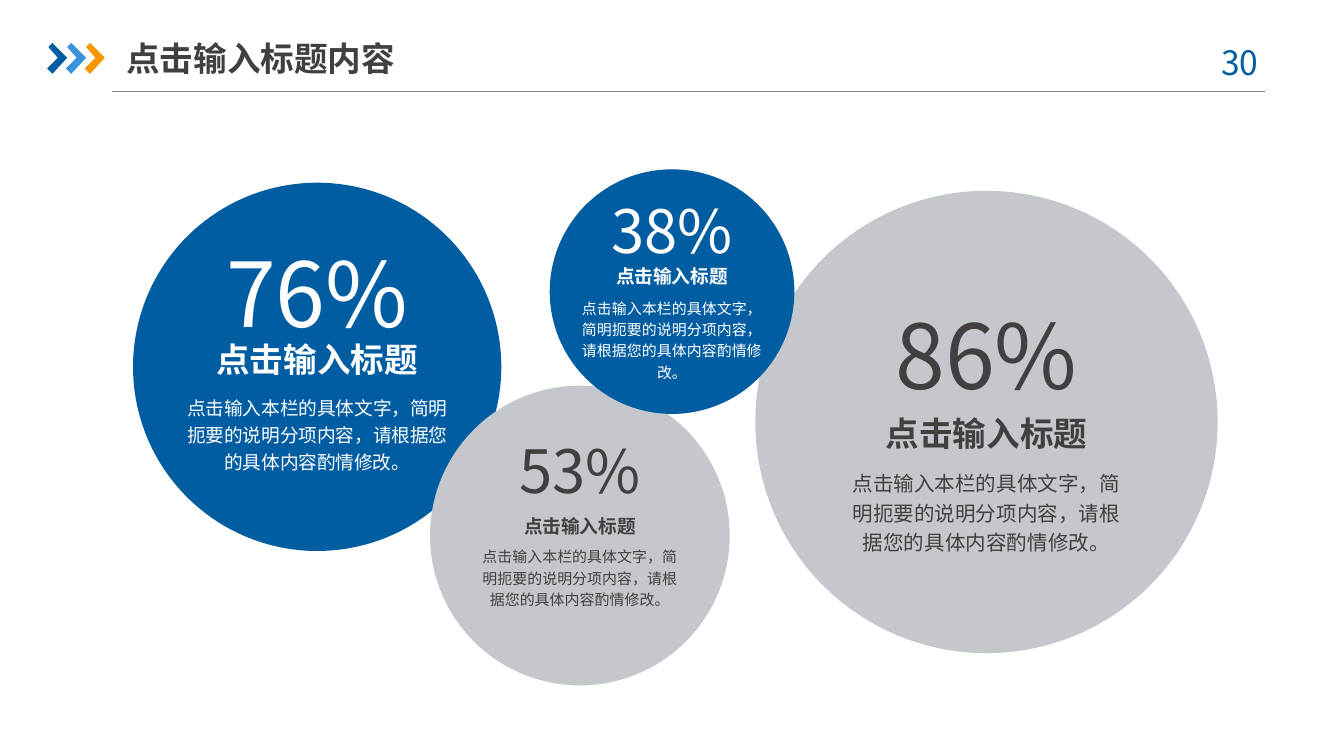
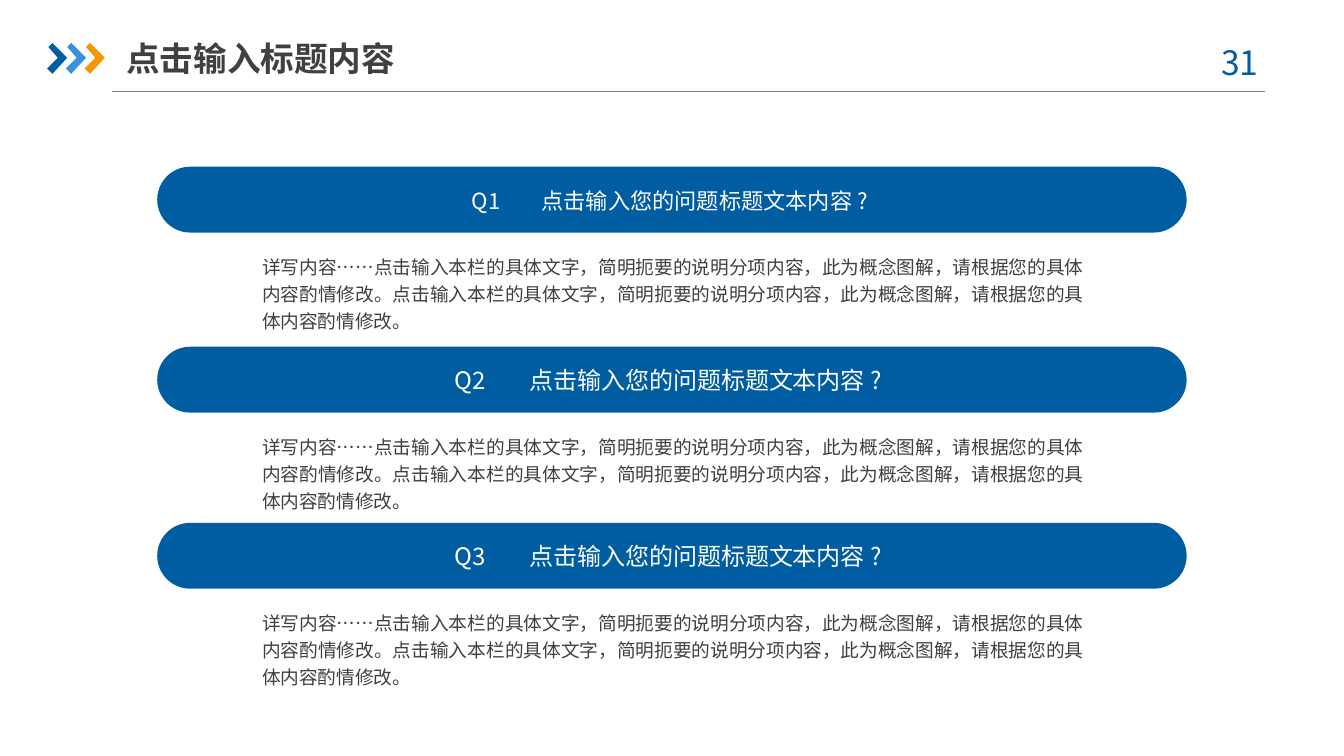
from lxml import etree
from pptx import Presentation
from pptx.dml.color import RGBColor
from pptx.enum.shapes import MSO_CONNECTOR, MSO_SHAPE
from pptx.enum.text import MSO_ANCHOR, MSO_AUTO_SIZE, PP_ALIGN
from pptx.oxml.ns import qn
from pptx.util import Inches, Pt

CIRCLE, PILL = MSO_SHAPE.OVAL, MSO_SHAPE.ROUNDED_RECTANGLE
STRAIGHT = MSO_CONNECTOR.STRAIGHT
LEFT, CENTER, JUSTIFY = PP_ALIGN.LEFT, PP_ALIGN.CENTER, PP_ALIGN.JUSTIFY
TOP, MIDDLE = MSO_ANCHOR.TOP, MSO_ANCHOR.MIDDLE
FIXED, GROW = MSO_AUTO_SIZE.NONE, MSO_AUTO_SIZE.SHAPE_TO_FIT_TEXT

BLUE = RGBColor(0x00, 0x5D, 0xA2)
SKY = RGBColor(0x39, 0x92, 0xDB)
ORANGE = RGBColor(0xF7, 0x96, 0x00)
SILVER = RGBColor(0xC4, 0xC7, 0xCB)
GRAY = RGBColor(0x80, 0x80, 0x80)
INK = RGBColor(0x40, 0x40, 0x40)
WHITE = RGBColor(0xFF, 0xFF, 0xFF)
PALE = RGBColor(0xFC, 0xFC, 0xFC)

FONT = "Noto Sans CJK SC"
COLUMNS = 100
ROWS = 56.25
TITLE_ONLY = 5
CHEVRON = [(0.1, 0.3), (0.4, 0), (1.5, 1.1), (0.4, 2.3), (0, 1.9), (0.8, 1.1)]

TITLE = "点击输入标题内容"
HEADING = "点击输入标题"
NOTE = "点击输入本栏的具体文字，简明扼要的说明分项内容，请根据您的具体内容酌情修改。"
QUESTION = "点击输入您的问题标题文本内容 ?"
ANSWER = "详写内容……" + "点击输入本栏的具体文字，简明扼要的说明分项内容，此为概念图解，请根据您的具体内容酌情修改。" * 2

BUBBLES = [
    dict(value="86%", circle=(56.2, 14.2, 34.4), fill=SILVER, ink=INK, sizes=(48, 18, 11),
         tops=(22.3, 30.7, 34.7), note_width=21.2),
    dict(value="76%", circle=(9.9, 13.6, 27.4), fill=BLUE, ink=WHITE, sizes=(48, 18, 10),
         tops=(17.7, 25.2, 29.2), note_width=19.7),
    dict(value="53%", circle=(32, 28.7, 22.3), fill=SILVER, ink=INK, sizes=(32, 10, 8),
         tops=(32.3, 38.3, 40.5), note_width=15.3),
    dict(value="38%", circle=(40.9, 12.6, 18.2), fill=BLUE, ink=WHITE, sizes=(32, 10, 8),
         tops=(14.4, 19.7, 22), note_width=14.5),
]
QUESTIONS = [
    dict(label="Q1", top=12.4, size=11.9, inset=1.6, tab=5.2),
    dict(label="Q2", top=25.8, size=12.9, inset=0.3, tab=5.6),
    dict(label="Q3", top=38.9, size=12.9, inset=0.3, tab=5.6),
]


def apply(target, values):
    for name, value in values.items():
        setattr(target, name, value)


class Deck:
    def __init__(self):
        self.file = Presentation()
        self.file.slide_width = Inches(10)
        self.file.slide_height = self.file.slide_width * 9 // 16
        self.page = None

    def x(self, columns):
        return round(self.file.slide_width * columns / COLUMNS)

    def y(self, rows):
        return round(self.file.slide_height * rows / ROWS)

    def area(self, left, top, width, height):
        return self.x(left), self.y(top), self.x(width), self.y(height)

    def start_page(self, number):
        layout = self.file.slide_layouts[TITLE_ONLY]
        self.page = self.file.slides.add_slide(layout)
        self.line((8.3, 6.8), (94.1, 6.8))
        for index, color in enumerate((BLUE, SKY, ORANGE)):
            self.chevron(3.5 + 1.4 * index, 3.2, color)
        self.text((88.6, 2.6, 7.3, 4), str(number), 18, BLUE, insets=(1, 0.5))
        title = self.page.shapes.title
        apply(title, dict(zip(("left", "top", "width", "height"), self.area(9.4, 2.2, 23.3, 4.2))))
        self.fill_text(title, TITLE, 18, INK, bold=True, align=LEFT, anchor=MIDDLE,
                       fit=FIXED, insets=(0, 0.5))

    def line(self, start, end):
        rule = self.page.shapes.add_connector(
            STRAIGHT, self.x(start[0]), self.y(start[1]), self.x(end[0]), self.y(end[1]))
        rule.line.color.rgb = GRAY
        rule.line.width = Pt(0.75)
        etree.SubElement(rule.element.spPr, qn("a:effectLst"))

    def paint(self, shape, color):
        shape.shadow.inherit = False
        shape.fill.solid()
        shape.fill.fore_color.rgb = color
        shape.line.fill.background()

    def chevron(self, left, top, color):
        points = [(self.x(left + across), self.y(top + down)) for across, down in CHEVRON]
        builder = self.page.shapes.build_freeform(*points[0])
        builder.add_line_segments(points[1:], close=True)
        self.paint(builder.convert_to_shape(), color)

    def shape(self, kind, area, color):
        shape = self.page.shapes.add_shape(kind, *self.area(*area))
        self.paint(shape, color)
        return shape

    def text(self, area, words, size, color, **style):
        box = self.page.shapes.add_textbox(*self.area(*area))
        self.fill_text(box, words, size, color, **style)

    def fill_text(self, box, words, size, color, bold=False, align=CENTER, spacing=1.0,
                  anchor=TOP, fit=GROW, wrap=True, insets=(0, 0), tab=None):
        across, down = self.x(insets[0]), self.y(insets[1])
        apply(box.text_frame, dict(
            margin_left=across, margin_right=0 if tab else across, margin_top=down,
            margin_bottom=down, vertical_anchor=anchor, auto_size=fit, word_wrap=wrap))
        para = box.text_frame.paragraphs[0]
        if tab:
            stops = etree.SubElement(para._p.get_or_add_pPr(), qn("a:tabLst"))
            etree.SubElement(stops, qn("a:tab"), pos=str(self.x(tab)), algn="l")
        apply(para, dict(alignment=align, line_spacing=spacing))
        span = para.add_run()
        span.text = words
        apply(span.font, dict(name=FONT, size=Pt(size), bold=bold))
        span.font.color.rgb = color
        etree.SubElement(span._r.get_or_add_rPr(), qn("a:ea"), typeface=FONT)

    def bubble(self, value, circle, fill, ink, sizes, tops, note_width):
        left, top, diameter = circle
        self.shape(CIRCLE, (left, top, diameter, diameter), fill)
        middle = left + diameter / 2
        value_size, heading_size, note_size = sizes
        rows = [
            (value, value_size, value_size * 0.29, 0.17, dict(wrap=False)),
            (HEADING, heading_size, heading_size * 0.84, 0.17, dict(wrap=False, bold=True)),
            (NOTE, note_size, note_width, 0.61, dict(spacing=1.2)),
        ]
        for row_top, (words, size, width, height, style) in zip(tops, rows):
            area = (middle - width / 2, row_top, width, size * height)
            self.text(area, words, size, ink, **style)

    def question(self, label, top, size, inset, tab):
        band = self.shape(PILL, (11.7, top, 76.6, 4.9), BLUE)
        band.adjustments[0] = 0.5
        self.text((33.5, top + 0.8, 33.1, 3.4), f"{label}\t{QUESTION}", size, PALE,
                  align=LEFT, anchor=MIDDLE, fit=FIXED, insets=(inset, 0), tab=tab)
        self.text((19.5, top + 6.3, 61.1, 6.1), ANSWER, 10, INK, align=JUSTIFY, spacing=1.2)


def main():
    deck = Deck()
    deck.start_page(30)
    for bubble in BUBBLES:
        deck.bubble(**bubble)
    deck.start_page(31)
    for question in QUESTIONS:
        deck.question(**question)
    deck.file.save("out.pptx")


if __name__ == "__main__":
    main()
